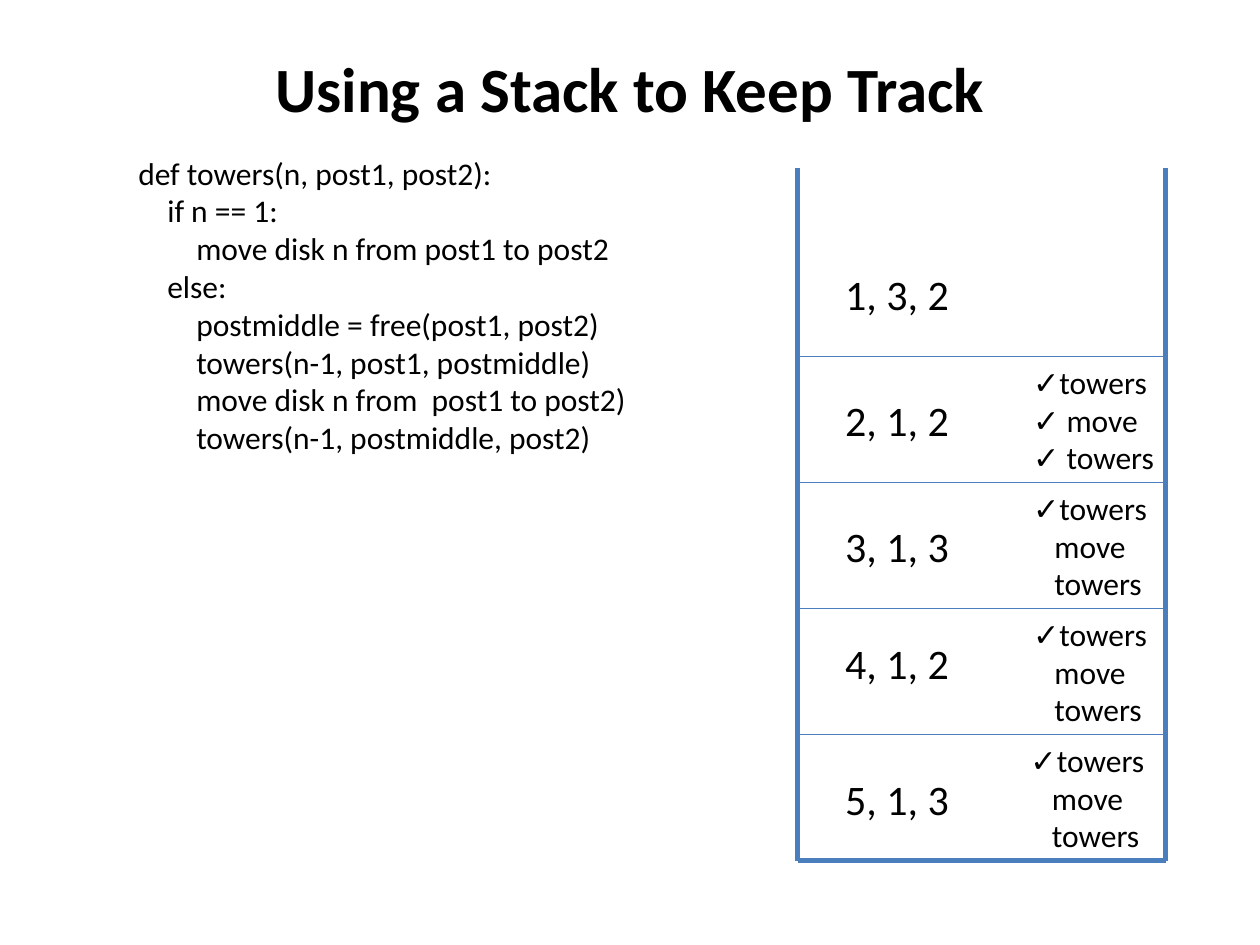
"""Build a slide that traces recursive tower calls on a stack."""
import pptx
import pptx.dml.color
import pptx.enum.shapes
import pptx.enum.text
import pptx.oxml.ns
import pptx.util
from lxml import etree

Inches = pptx.util.Inches
BLACK = pptx.dml.color.RGBColor(0x00, 0x00, 0x00)
BLUE = pptx.dml.color.RGBColor(0x4B, 0x7E, 0xBC)
ALIGN = pptx.enum.text.PP_ALIGN
ANCHOR = pptx.enum.text.MSO_ANCHOR

CODE = [
    (0, "def towers(n, post1, post2):"),
    (1, "if n == 1:"),
    (2, "move disk n from post1 to post2"),
    (1, "else:"),
    (2, "postmiddle = free(post1, post2)"),
    (2, "towers(n-1, post1, postmiddle)"),
    (2, "move disk n from  post1 to post2)"),
    (2, "towers(n-1, postmiddle, post2)"),
]
STARTED = [(0, "✓towers"), (1, "move"), (1, "towers")]
FINISHED = [(0, "✓towers"), (0, "✓ move"), (0, "✓ towers")]

LEFT, RIGHT, TOP, BOTTOM = 6.33, 9.25, 1.33, 6.83
FRAMES = [
    ("1, 3, 2", 2.08, None, None),
    ("2, 1, 2", 3.08, 8.1, FINISHED),
    ("3, 1, 3", 4.08, 8.1, STARTED),
    ("4, 1, 2", 5.01, 8.1, STARTED),
    ("5, 1, 3", 6.09, 8.08, STARTED),
]


def write(para, text, *, size, bold=False, align=ALIGN.LEFT, indent=0):
    """Put formatted text into a paragraph."""
    para.alignment = align
    if indent:
        para._p.get_or_add_pPr().set("marL", str(Inches(indent)))
    span = para.add_run()
    span.text = text
    span.font.name = "Calibri"
    span.font.size = pptx.util.Pt(size)
    span.font.bold = bold
    span.font.color.rgb = BLACK


class Painter:
    """Hold the style and the current slide."""

    def __init__(self, page, color):
        """Remember the slide and its line colour."""
        self.page = page
        self.color = color

    def text(self, left, top, width, height, lines, step=0, anchor=ANCHOR.TOP, **style):
        """Add a text box with one paragraph per (level, text) line."""
        box = self.page.shapes.add_textbox(
            Inches(left), Inches(top), Inches(width), Inches(height))
        frame = box.text_frame
        frame.word_wrap = True
        frame.vertical_anchor = anchor
        for index, (level, words) in enumerate(lines):
            para = frame.add_paragraph() if index else frame.paragraphs[0]
            write(para, words, indent=level * step, **style)

    def line(self, x1, y1, x2, y2, weight):
        """Add a straight line without a shadow."""
        line = self.page.shapes.add_connector(
            pptx.enum.shapes.MSO_CONNECTOR.STRAIGHT,
            Inches(x1), Inches(y1), Inches(x2), Inches(y2))
        line.line.color.rgb = self.color
        line.line.width = pptx.util.Pt(weight)
        etree.SubElement(line._element.spPr, pptx.oxml.ns.qn("a:effectLst"))


def main():
    """Draw the title, the code and the stack."""
    deck = pptx.Presentation()
    deck.slide_width, deck.slide_height = Inches(10), Inches(7.5)
    painter = Painter(deck.slides.add_slide(deck.slide_layouts[6]), BLUE)

    painter.text(0.5, 0.3, 9, 0.78, [(0, "Using a Stack to Keep Track")],
                 anchor=ANCHOR.MIDDLE, size=36, bold=True, align=ALIGN.CENTER)
    painter.text(1, 1.17, 8.5, 2.52, CODE, step=0.23, size=18)

    painter.line(LEFT, TOP, LEFT, BOTTOM, 3)
    painter.line(LEFT, BOTTOM, RIGHT, BOTTOM, 3)
    painter.line(RIGHT, BOTTOM, RIGHT, TOP, 3)

    for index, (call, call_top, steps_left, steps) in enumerate(FRAMES):
        painter.text(LEFT, call_top, 1.58, 0.5, [(0, call)],
                     size=24, align=ALIGN.CENTER)
        if steps:
            edge = 1.83 + index
            shift = -0.02 if index == 1 else 0
            painter.line(LEFT + shift, edge, RIGHT + shift, edge, 1)
            painter.text(steps_left, edge, 1.42, 1.01, steps, step=0.17, size=18)

    deck.save("out.pptx")


if __name__ == "__main__":
    main()
